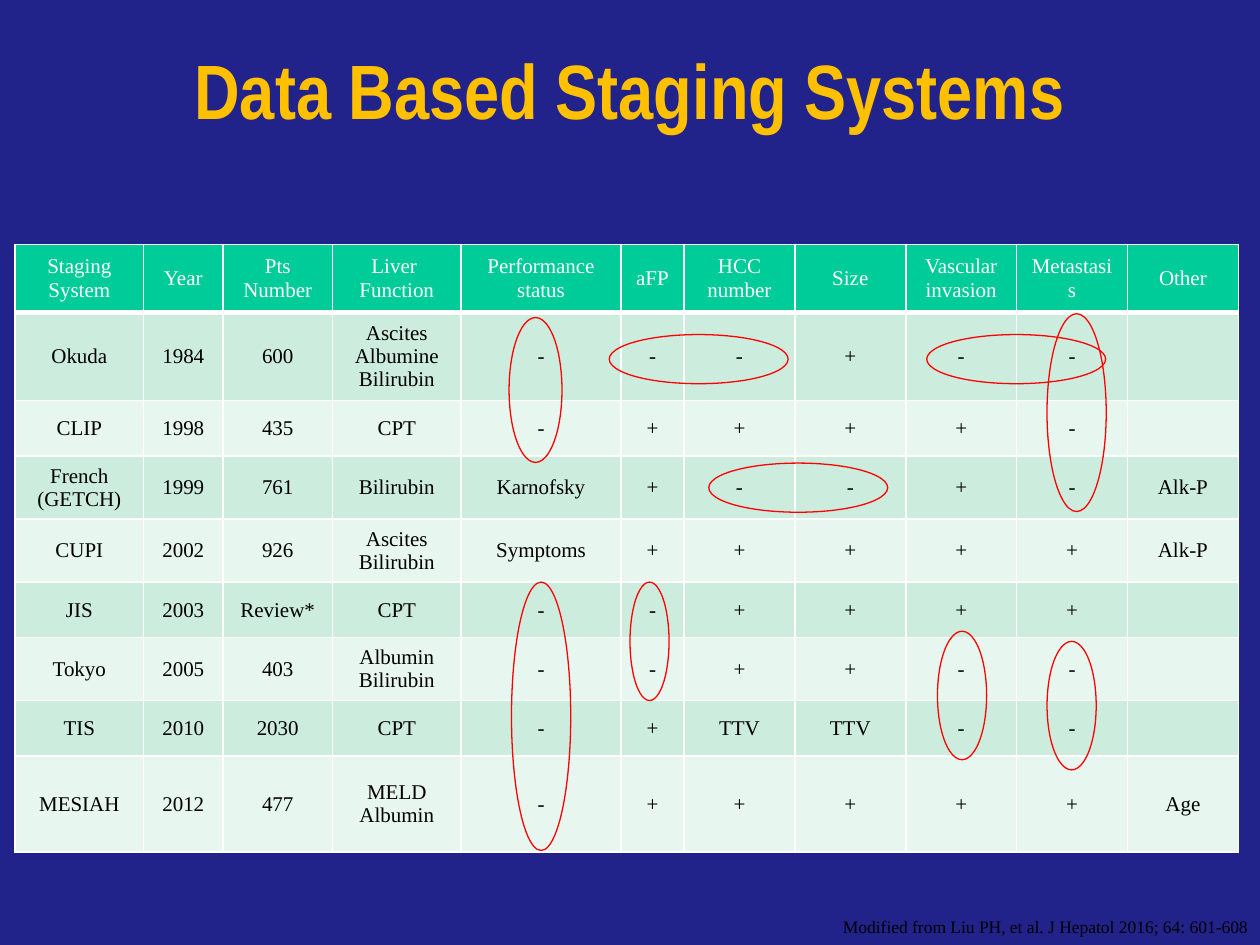
from lxml import etree
from pptx import Presentation
from pptx.dml.color import RGBColor
from pptx.enum.shapes import MSO_SHAPE
from pptx.enum.text import MSO_ANCHOR, MSO_AUTO_SIZE, PP_ALIGN
from pptx.oxml.ns import qn
from pptx.util import Inches, Pt

ELLIPSE = MSO_SHAPE.OVAL
CENTER, RIGHT = PP_ALIGN.CENTER, PP_ALIGN.RIGHT
TOP, MIDDLE = MSO_ANCHOR.TOP, MSO_ANCHOR.MIDDLE
GROW = MSO_AUTO_SIZE.SHAPE_TO_FIT_TEXT
TITLE_ONLY = 5

HEADER = ["Staging System", "Year", "Pts\nNumber", "Liver \nFunction",
          "Performance status", "aFP", "HCC number", "Size",
          "Vascular invasion", "Metastasis", "Other"]
SYSTEMS = [
    ["Okuda", "1984", "600", "Ascites\nAlbumine\nBilirubin", "-", "-", "-", "+", "-", "-", ""],
    ["CLIP", "1998", "435", "CPT", "-", "+", "+", "+", "+", "-", ""],
    ["French\n(GETCH)", "1999", "761", "Bilirubin", "Karnofsky", "+", "-", "-", "+", "-", "Alk-P"],
    ["CUPI", "2002", "926", "Ascites\nBilirubin", "Symptoms", "+", "+", "+", "+", "+", "Alk-P"],
    ["JIS", "2003", "Review*", "CPT", "-", "-", "+", "+", "+", "+", ""],
    ["Tokyo", "2005", "403", "Albumin\nBilirubin", "-", "-", "+", "+", "-", "-", ""],
    ["TIS", "2010", "2030", "CPT", "-", "+", "TTV", "TTV", "-", "-", ""],
    ["MESIAH", "2012", "477", "MELD\nAlbumin", "-", "+", "+", "+", "+", "+", "Age"],
]
COLUMN_WIDTHS = [1.02, 0.63, 0.87, 1.02, 1.27, 0.5] + [0.88] * 5
ROW_HEIGHTS = [0.54, 0.7, 0.44, 0.5, 0.5, 0.44, 0.5, 0.44, 0.76]
MISSING_FACTORS = [
    (4.04, 2.52, 0.42, 1.15, 0),
    (8.31, 2.49, 0.47, 1.57, 0),
    (7.87, 2.14, 0.39, 1.42, 90),
    (5.35, 2.14, 0.39, 1.42, 90),
    (4.06, 4.62, 0.47, 2.13, 0),
    (5, 4.62, 0.31, 0.94, 0),
    (6.14, 3.16, 0.39, 1.42, 90),
    (8.31, 5.09, 0.39, 1.02, 0),
    (7.44, 5.01, 0.39, 1.02, 0),
]


def color(value):
    return RGBColor.from_string(value)


class StagingSlide:
    heading_font = "Arial Narrow"
    body_font = "Times New Roman"
    background, gold, white, black, red = "22228B", "FFC000", "FFFFFF", "000000", "FF0000"
    header_fill = "00CC99"
    band_fills = ["CCECDE", "E7F6EF"]

    def __init__(self, presentation):
        self.slide = presentation.slides.add_slide(presentation.slide_layouts[TITLE_ONLY])
        fill = self.slide.background.fill
        fill.solid()
        fill.fore_color.rgb = color(self.background)

    def format_text(self, frame, font, size, ink, align, bold=False):
        for paragraph in frame.paragraphs:
            paragraph.alignment = align
            for run in paragraph.runs:
                run.font.name = font
                run.font.size = Pt(size)
                run.font.bold = bold
                run.font.color.rgb = color(ink)

    def title(self, text, left, top, width, height):
        heading = self.slide.shapes.title
        heading.left, heading.top = Inches(left), Inches(top)
        heading.width, heading.height = Inches(width), Inches(height)
        frame = heading.text_frame
        frame.text = text
        frame.word_wrap = True
        frame.auto_size = GROW
        frame.vertical_anchor = TOP
        self.format_text(frame, self.heading_font, 44, self.gold, CENTER, True)

    def citation(self, text, left, top, width, height):
        box = self.slide.shapes.add_textbox(
            Inches(left), Inches(top), Inches(width), Inches(height))
        frame = box.text_frame
        frame.text = text
        frame.word_wrap = True
        frame.auto_size = GROW
        self.format_text(frame, self.body_font, 10, self.black, RIGHT)

    def borders(self, cell, bottom):
        properties = cell._tc.get_or_add_tcPr()
        sides = [("a:lnL", 1), ("a:lnR", 1), ("a:lnT", 1), ("a:lnB", bottom)]
        for index, (side, points) in enumerate(sides):
            line = etree.Element(qn(side), w=str(Pt(points)))
            solid = etree.SubElement(line, qn("a:solidFill"))
            etree.SubElement(solid, qn("a:srgbClr"), val=self.white)
            properties.insert(index, line)

    def cell(self, cell, text, fill, ink, bottom):
        cell.text = text
        cell.vertical_anchor = MIDDLE
        cell.fill.solid()
        cell.fill.fore_color.rgb = color(fill)
        self.format_text(cell.text_frame, self.body_font, 12, ink, CENTER)
        self.borders(cell, bottom)

    def table(self, rows, left, top, widths, heights):
        table = self.slide.shapes.add_table(
            len(rows), len(widths), Inches(left), Inches(top),
            Inches(sum(widths)), Inches(sum(heights))).table
        for column, width in zip(table.columns, widths):
            column.width = Inches(width)
        for row, height in zip(table.rows, heights):
            row.height = Inches(height)
        for number, texts in enumerate(rows):
            if number == 0:
                style = self.header_fill, self.white, 3
            else:
                style = self.band_fills[(number - 1) % 2], self.black, 1
            for position, text in enumerate(texts):
                self.cell(table.cell(number, position), text, *style)

    def ring(self, left, top, width, height, rotation):
        ring = self.slide.shapes.add_shape(
            ELLIPSE, Inches(left), Inches(top), Inches(width), Inches(height))
        ring.rotation = rotation
        ring.shadow.inherit = False
        ring.fill.background()
        ring.line.color.rgb = color(self.red)
        ring.line.width = Pt(0.75)


def main():
    presentation = Presentation()
    presentation.slide_width = Inches(10)
    presentation.slide_height = Inches(7.5)
    staging = StagingSlide(presentation)
    staging.title("Data Based Staging Systems", 0, 0.29, 10, 0.84)
    staging.citation("Modified from Liu PH, et al. J Hepatol 2016; 64: 601-608",
                     5.69, 7.22, 4.31, 0.27)
    staging.table([HEADER] + SYSTEMS, 0.12, 1.94, COLUMN_WIDTHS, ROW_HEIGHTS)
    for factor in MISSING_FACTORS:
        staging.ring(*factor)
    presentation.save("out.pptx")


if __name__ == "__main__":
    main()
